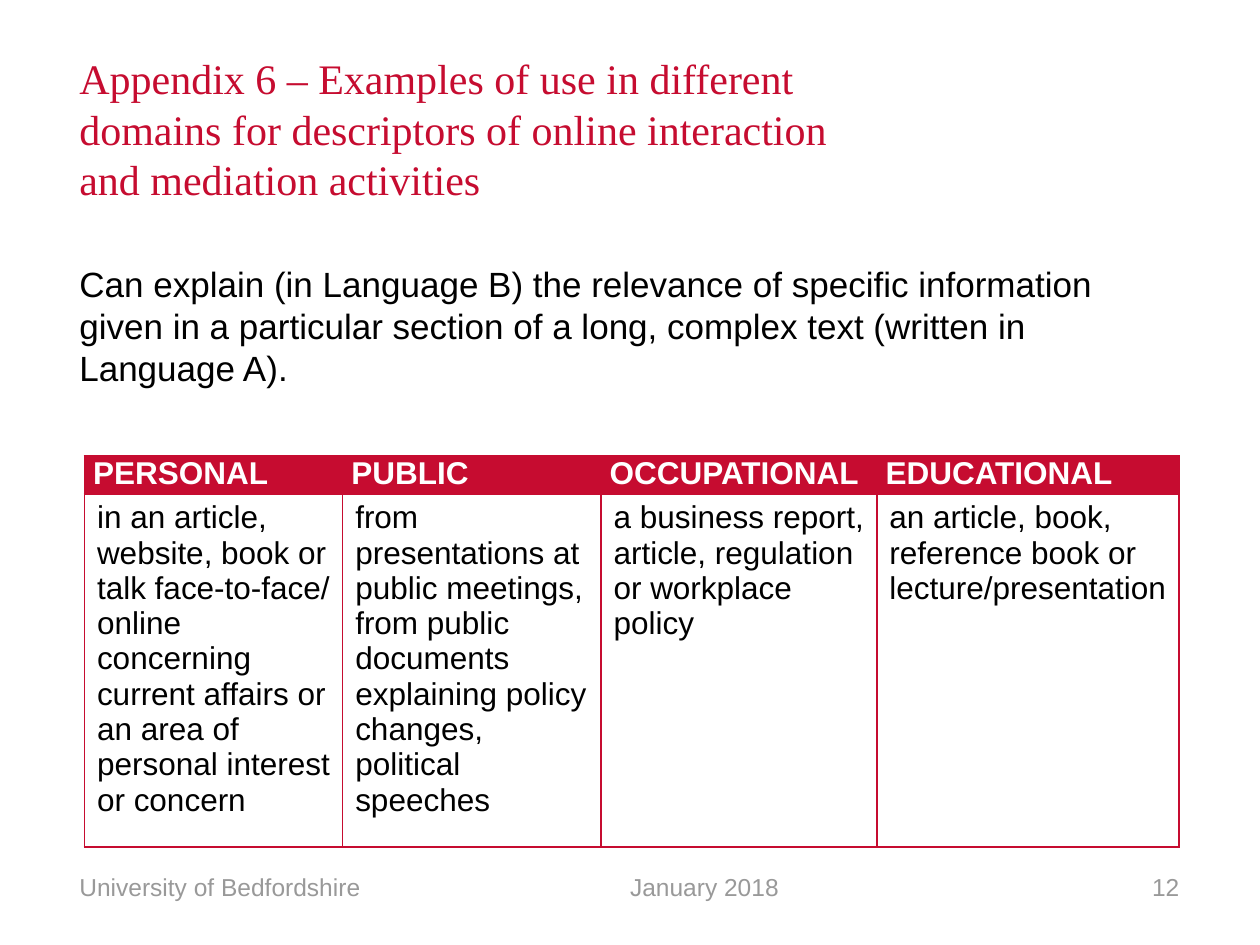
from dataclasses import dataclass

from lxml import etree
from pptx import Presentation
from pptx.dml.color import RGBColor
from pptx.enum.text import PP_ALIGN
from pptx.oxml.ns import qn
from pptx.util import Inches, Pt

LEFT, RIGHT = PP_ALIGN.LEFT, PP_ALIGN.RIGHT
RED, BLACK, WHITE, GREY = "C60C30", "000000", "FFFFFF", "999999"
SANS, SERIF = "Arial", "Times New Roman"
MARGIN = 0.63
FOOTER_TOP, FOOTER_HEIGHT = 6.92, 0.5


@dataclass
class TextBlock:
    text: str
    left: float
    top: float
    width: float
    height: float
    size: float
    color: str
    face: str = SANS
    align: PP_ALIGN = LEFT
    line_points: float | None = None


@dataclass
class Domain:
    name: str
    example: str
    width: float


def footer(text: str, left: float, width: float, align: PP_ALIGN = LEFT) -> TextBlock:
    return TextBlock(text, left, FOOTER_TOP, width, FOOTER_HEIGHT, 14, GREY, align=align)


BLOCKS = [
    TextBlock(
        "Appendix 6 – Examples of use in different domains for descriptors "
        "of online interaction and mediation activities",
        MARGIN, 0.42, 6.24, 0.84, 24, RED, SERIF, line_points=28.8,
    ),
    TextBlock(
        "Can explain (in Language B) the relevance of specific information given "
        "in a particular section of a long, complex text (written in Language A).",
        MARGIN, 2.08, 8.73, 4.58, 20, BLACK, line_points=24,
    ),
    footer("January 2018", 5, 1.88),
    footer("University of Bedfordshire", MARGIN, 4.37),
    footer("12", 6.88, 2.48, RIGHT),
]

DOMAINS = [
    Domain("PERSONAL", "in an article, website, book or talk face-to-face/ online concerning "
           "current affairs or an area of personal interest or concern", 2.05),
    Domain("PUBLIC", "from presentations at public meetings, from public documents "
           "explaining policy changes, political speeches", 2.05),
    Domain("OCCUPATIONAL", "a business report, article, regulation or workplace policy", 2.19),
    Domain("EDUCATIONAL", "an article, book, reference book or lecture/presentation", 2.4),
]
TABLE_LEFT, TABLE_TOP = 0.67, 3.62
HEADER_HEIGHT, EXAMPLE_HEIGHT = 0.28, 2.62


def rgb(color: str) -> RGBColor:
    return RGBColor.from_string(color)


def style_paragraph(para, size: float, color: str, face: str = SANS, bold: bool = False) -> None:
    para.font.size = Pt(size)
    para.font.name = face
    para.font.bold = bold
    para.font.color.rgb = rgb(color)


def add_text(page, block: TextBlock) -> None:
    box = page.shapes.add_textbox(
        Inches(block.left), Inches(block.top), Inches(block.width), Inches(block.height)
    )
    frame = box.text_frame
    frame.word_wrap = True
    frame.margin_left = frame.margin_right = frame.margin_top = frame.margin_bottom = 0
    para = frame.paragraphs[0]
    para.text = block.text
    para.alignment = block.align
    if block.line_points:
        para.line_spacing = Pt(block.line_points)
    style_paragraph(para, block.size, block.color, block.face)


def add_borders(cell, color: str, points: float) -> None:
    """Line all four sides; border elements must precede the cell fill."""
    properties = cell._tc.get_or_add_tcPr()
    for index, side in enumerate(("a:lnL", "a:lnR", "a:lnT", "a:lnB")):
        line = etree.Element(qn(side), w=str(Pt(points)))
        fill = etree.SubElement(line, qn("a:solidFill"))
        etree.SubElement(fill, qn("a:srgbClr"), val=color)
        properties.insert(index, line)


def fill_cell(cell, text: str, fill: str, color: str, side: float, edge: float, bold: bool) -> None:
    cell.text = text
    cell.margin_left = cell.margin_right = Inches(side)
    cell.margin_top = cell.margin_bottom = Inches(edge)
    cell.fill.solid()
    cell.fill.fore_color.rgb = rgb(fill)
    style_paragraph(cell.text_frame.paragraphs[0], 18, color, bold=bold)
    add_borders(cell, RED, 1)


def add_domain_table(page, domains: list[Domain]) -> None:
    table = page.shapes.add_table(
        2, len(domains), Inches(TABLE_LEFT), Inches(TABLE_TOP),
        Inches(sum(domain.width for domain in domains)),
        Inches(HEADER_HEIGHT + EXAMPLE_HEIGHT),
    ).table
    table.horz_banding = False
    table.rows[0].height = Inches(HEADER_HEIGHT)
    table.rows[1].height = Inches(EXAMPLE_HEIGHT)
    for column, domain in enumerate(domains):
        table.columns[column].width = Inches(domain.width)
        fill_cell(table.cell(0, column), domain.name, RED, WHITE, 0.07, 0, True)
        fill_cell(table.cell(1, column), domain.example, WHITE, BLACK, 0.1, 0.05, False)


def main() -> None:
    deck = Presentation()
    deck.slide_width, deck.slide_height = Inches(10), Inches(7.5)
    page = deck.slides.add_slide(deck.slide_layouts[6])
    for block in BLOCKS:
        add_text(page, block)
    add_domain_table(page, DOMAINS)
    deck.save("out.pptx")


if __name__ == "__main__":
    main()
